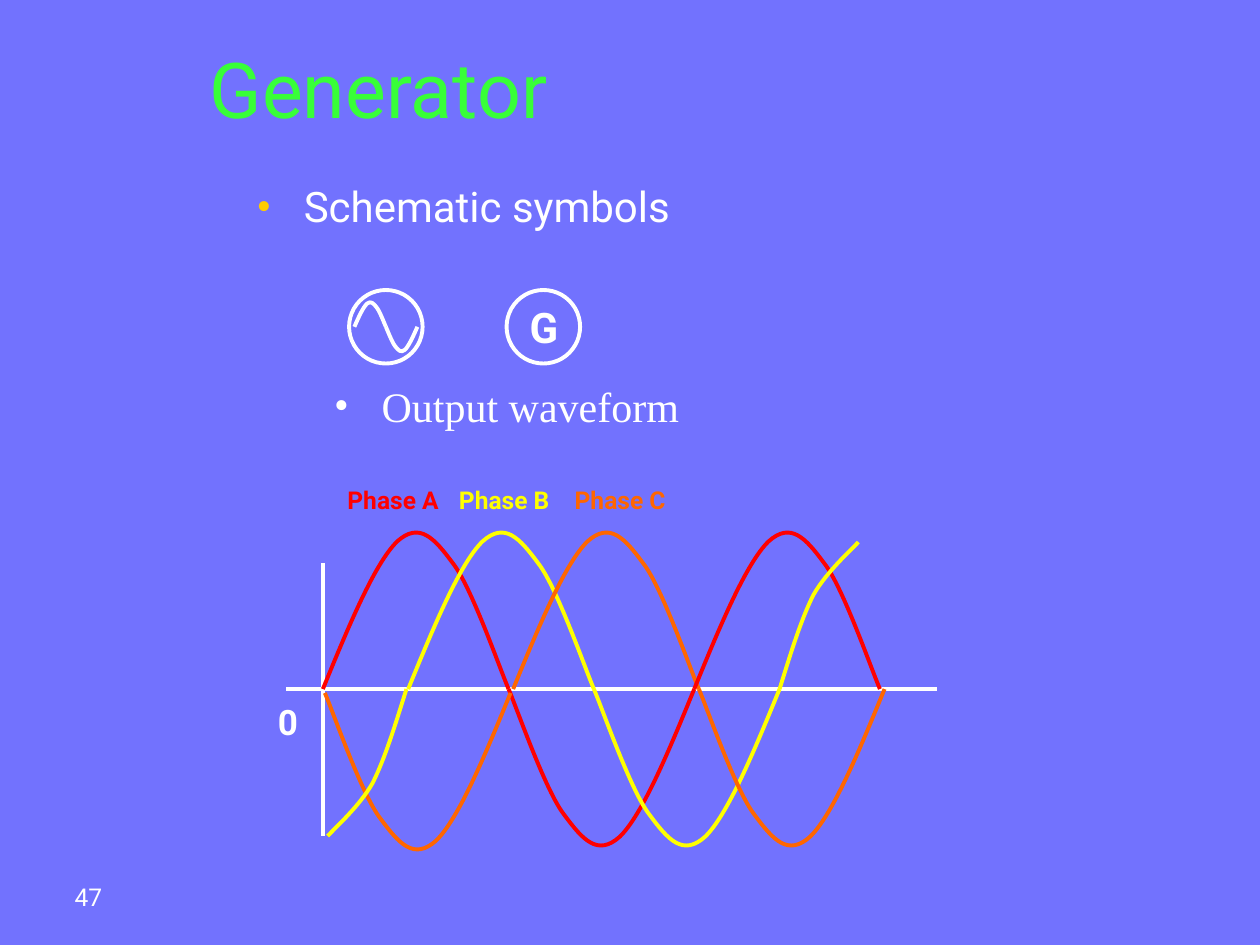
from dataclasses import dataclass

from lxml.etree import SubElement
from pptx import Presentation
from pptx.dml.color import RGBColor
from pptx.enum.shapes import MSO_CONNECTOR as Connector, MSO_SHAPE as Shape
from pptx.enum.text import MSO_ANCHOR as Anchor, PP_ALIGN as Align
from pptx.oxml.ns import qn
from pptx.util import Pt


@dataclass(frozen=True)
class Theme:
    background: str = "7272FE"
    title: str = "38FF38"
    text: str = "FFFFFF"
    bullet: str = "FFCC00"
    phase_a: str = "FF0000"
    phase_b: str = "FFFF00"
    phase_c: str = "FF6600"
    title_size: float = 44
    body_size: float = 24
    zero_size: float = 20
    label_size: float = 14
    line_width: float = 2.25
    font: str = "Roboto"
    serif: str = "Times New Roman"


theme = Theme()
presentation = Presentation()
presentation.slide_width, presentation.slide_height = Pt(720), Pt(540)
slide = presentation.slides.add_slide(presentation.slide_layouts[6])
slide.background.fill.solid()
slide.background.fill.fore_color.rgb = RGBColor.from_string(theme.background)
shapes = slide.shapes


def write(shape, text, size, color, bold=False, font=theme.font,
          align=Align.CENTER, anchor=Anchor.TOP, bullet=None):
    frame = shape.text_frame
    frame.word_wrap = True
    frame.vertical_anchor = anchor
    paragraph = frame.paragraphs[0]
    paragraph.alignment = align
    if bullet:
        properties = paragraph._p.get_or_add_pPr()
        properties.set("marL", str(Pt(27)))
        properties.set("indent", str(-Pt(27)))
        bullet_color = SubElement(properties, qn("a:buClr"))
        SubElement(bullet_color, qn("a:srgbClr")).set("val", bullet)
        SubElement(properties, qn("a:buFont")).set("typeface", theme.serif)
        SubElement(properties, qn("a:buChar")).set("char", "•")
    run = paragraph.add_run()
    run.text = text
    run.font.size, run.font.name, run.font.bold = Pt(size), font, bold
    run.font.color.rgb = RGBColor.from_string(color)


def draw_curve(controls, x, y, width, height, color):
    """Draw chained cubic Béziers, scaled from unit size; positive height is up."""
    points = [(Pt(x + u * width), Pt(y - v * height)) for u, v in controls]
    builder = shapes.build_freeform(*points[0], scale=1.0)
    builder.add_line_segments(points[1:], close=False)
    curve = builder.convert_to_shape()
    # Join every three line points into one cubic segment
    lines = list(curve._element.iter(qn("a:lnTo")))
    outline = lines[0].getparent()
    for index, line in enumerate(lines):
        if index % 3 == 0:
            cubic = SubElement(outline, qn("a:cubicBezTo"))
        cubic.append(line[0])
        outline.remove(line)
    curve.shadow.inherit = False
    curve.fill.background()
    curve.line.color.rgb = RGBColor.from_string(color)
    curve.line.width = Pt(theme.line_width)


# Unit curves: half a wave, and the part of a wave cut off at the plot edge
HALF_WAVE = [(0, 0), (0.14, 0.38), (0.28, 0.75), (0.4, 0.88), (0.52, 1), (0.6, 0.9),
             (0.7, 0.75), (0.8, 0.61), (0.95, 0.13), (1, 0)]
PART_WAVE = [(0, 0), (0.14, 0.24), (0.27, 0.47), (0.43, 0.64), (0.6, 0.8),
             (0.9, 0.94), (1, 1)]

# Title, bulleted lines and slide number
title = shapes.add_textbox(Pt(112.75), Pt(23), Pt(571), Pt(54.7))
write(title, "Generator", theme.title_size, theme.title,
      align=Align.LEFT, anchor=Anchor.MIDDLE)
for text, top, align, font, bullet in (
    ("Schematic symbols", 99.75, Align.LEFT, theme.font, theme.bullet),
    ("Output waveform", 213.75, Align.CENTER, theme.serif, theme.text),
):
    box = shapes.add_textbox(Pt(139.5), Pt(top), Pt(300), Pt(48))
    write(box, text, theme.body_size, theme.text, font=font, align=align, bullet=bullet)
number = shapes.add_textbox(Pt(26.5), Pt(488.25), Pt(48.2), Pt(36))
write(number, "47", theme.label_size, theme.text, anchor=Anchor.BOTTOM)

# Schematic symbols: a sine wave and a letter, each in a circle
for left, letter in ((199.5, None), (289.5, "G")):
    circle = shapes.add_shape(Shape.OVAL, Pt(left), Pt(165.75), Pt(42), Pt(42))
    circle.shadow.inherit = False
    circle.fill.background()
    circle.line.color.rgb = RGBColor.from_string(theme.text)
    circle.line.width = Pt(theme.line_width)
    if letter:
        write(circle, letter, theme.body_size, theme.text, bold=True, anchor=Anchor.MIDDLE)
for x, direction in ((202.5, 1), (238.5, -1)):
    draw_curve(HALF_WAVE, x, 186.75, 18 * direction, 15 * direction, theme.text)

# Axes and origin
axis_y = 393.75
for ends in ((184.5, 321.75, 184.5, 477.75), (163.5, axis_y, 535.5, axis_y)):
    axis = shapes.add_connector(Connector.STRAIGHT, *map(Pt, ends))
    axis.line.color.rgb = RGBColor.from_string(theme.text)
    axis.line.width = Pt(theme.line_width)
    SubElement(axis._element.spPr, qn("a:effectLst"))
zero = shapes.add_textbox(Pt(151), Pt(397), Pt(27), Pt(31.5))
write(zero, "0", theme.zero_size, theme.text, bold=True)

# Phase labels
for text, left, color in (("Phase A", 189.75, theme.phase_a),
                          ("Phase B", 253.25, theme.phase_b),
                          ("Phase C", 319.5, theme.phase_c)):
    label = shapes.add_textbox(Pt(left), Pt(273.75), Pt(69.75), Pt(24))
    write(label, text, theme.label_size, color, bold=True)

# Waves: a lower half is the upper half turned about its right end
half, peak = 106.1, 95.8
for x, y, direction, color in (
    (184.5, axis_y, 1, theme.phase_a),
    (184.5 + 2 * half, axis_y, -1, theme.phase_a),
    (233.25, axis_y, 1, theme.phase_b),
    (233.25 + 2 * half, axis_y, -1, theme.phase_b),
    (293.25, axis_y, 1, theme.phase_c),
    (293.25 + 2 * half, axis_y, -1, theme.phase_c),
    (291.75, 396, -1, theme.phase_c),
    (184.5 + 2 * half, axis_y, 1, theme.phase_a),
):
    draw_curve(HALF_WAVE, x, y, half * direction, peak * direction, color)

# Cut-off ends of phase B
for x, direction in ((232.25, -1), (445.5, 1)):
    draw_curve(PART_WAVE, x, axis_y, 45 * direction, 84 * direction, theme.phase_b)

presentation.save("out.pptx")
